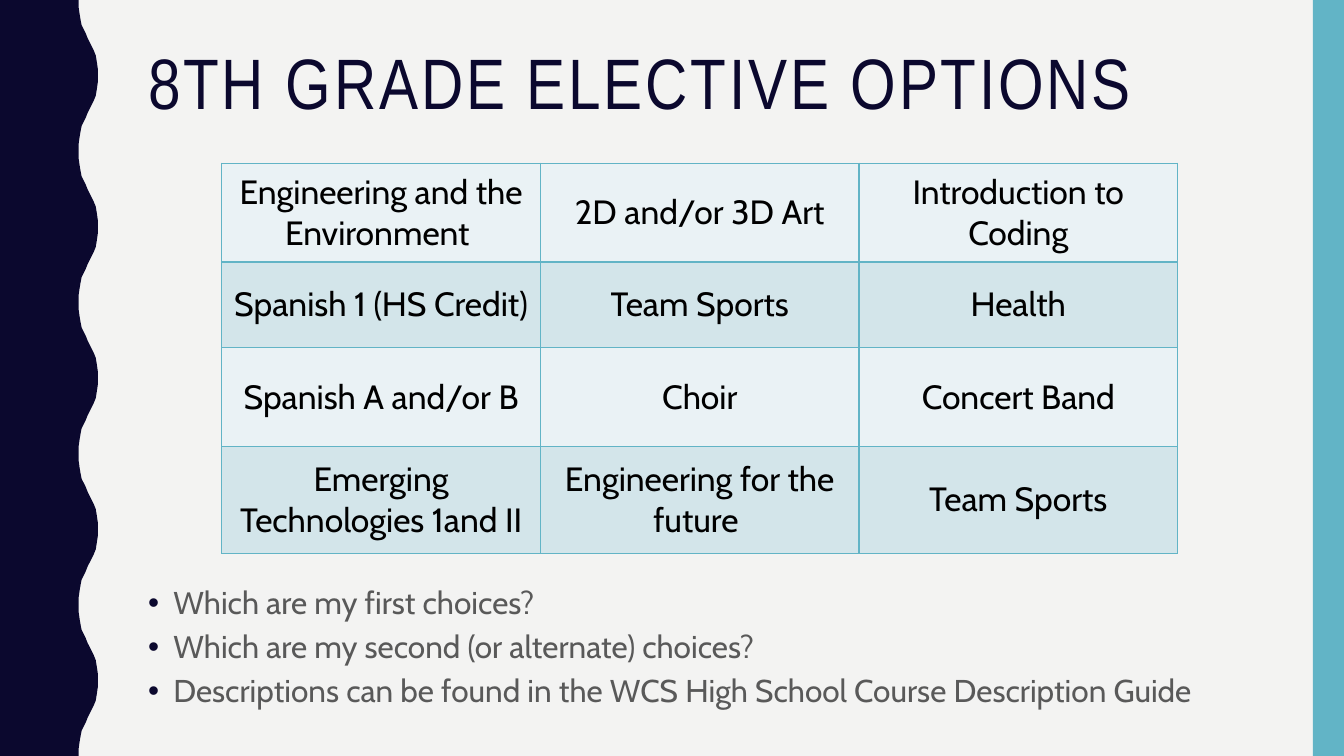
from lxml import etree
from pptx import Presentation
from pptx import util as u
from pptx.dml import color
from pptx.enum import text
from pptx.enum import shapes
from pptx.oxml import ns

PX = 9144
NAVY, TEAL, PAPER, GREY, BLACK = "0B082E", "62B4C6", "F3F3F2", "595959", "000000"
BANDS = ["EAF2F5", "D3E5EA"]
WIDTH, HEIGHT = 1333, 750

WAVE_PERIOD = 150
WAVE_RISE = [(78, 0), (78, 7), (79, 14), (80, 20), (81, 25), (83, 29), (85, 33),
             (87, 38), (89, 42), (91, 46), (93, 50), (95, 55), (96, 61), (97, 68)]

ELECTIVES = [
    ["Engineering and the Environment ", "2D and/or 3D Art", "Introduction to Coding"],
    ["Spanish 1 (HS Credit)", "Team Sports", "Health"],
    ["Spanish A and/or B", "Choir", "Concert Band"],
    ["Emerging Technologies 1and II", "Engineering for the future ", "Team Sports"],
]
QUESTIONS = [
    "Which are my first choices?",
    "Which are my second (or alternate) choices?",
    "Descriptions can be found in the WCS High School Course Description Guide",
]


def rgb(value):
    """Turn a hex string into a colour."""
    return color.RGBColor.from_string(value)


def px(*lengths):
    """Turn whole pixels into EMU."""
    return [u.Emu(length * PX) for length in lengths]


def add_xml(parent, tag, **attributes):
    """Append a DrawingML element to a parent."""
    return etree.SubElement(parent, ns.qn(tag), attributes)


class SlideBuilder:
    """Hold the style and the current slide."""

    heading_font = "Arial Narrow"
    body_font = "Cabin"

    def __init__(self, deck):
        """Add a title-only page with a plain background."""
        self.page = deck.slides.add_slide(deck.slide_layouts[5])
        self.page.background.fill.solid()
        self.page.background.fill.fore_color.rgb = rgb(PAPER)

    def paint(self, shape, fill):
        """Give a shape a flat fill without line or shadow."""
        shape.shadow.inherit = False
        shape.fill.solid()
        shape.fill.fore_color.rgb = rgb(fill)
        shape.line.fill.background()

    def span(self, para, words, size, ink, font):
        """Add one formatted run."""
        span = para.add_run()
        span.text = words
        span.font.size = u.Pt(size)
        span.font.name = font
        span.font.color.rgb = rgb(ink)
        return span

    def wave(self, fill):
        """Draw the left band with its wavy edge."""
        fall = [(x, WAVE_PERIOD - y) for x, y in reversed(WAVE_RISE[1:])]
        period = WAVE_RISE + [(97, WAVE_PERIOD // 2)] + fall
        edge = [(x, top + y) for top in range(0, HEIGHT, WAVE_PERIOD) for x, y in period]
        outline = self.page.shapes.build_freeform(0, 0, scale=PX)
        outline.add_line_segments(edge + [(78, HEIGHT), (0, HEIGHT)], close=True)
        self.paint(outline.convert_to_shape(), fill)

    def band(self, left, top, width, height, fill):
        """Draw a plain rectangle."""
        place = px(left, top, width, height)
        self.paint(self.page.shapes.add_shape(shapes.MSO_SHAPE.RECTANGLE, *place), fill)

    def title(self, words, left, top, width, height):
        """Place and format the title."""
        box = self.page.shapes.title
        box.left, box.top, box.width, box.height = px(left, top, width, height)
        frame = box.text_frame
        frame.auto_size = text.MSO_AUTO_SIZE.NONE
        frame.vertical_anchor = text.MSO_ANCHOR.TOP
        para = frame.paragraphs[0]
        para.alignment = text.PP_ALIGN.LEFT
        para.line_spacing = 0.9
        span = self.span(para, words, 51, NAVY, self.heading_font)
        span._r.get_or_add_rPr().set("spc", "200")

    def border(self, cell):
        """Draw thin lines on all sides of a cell."""
        properties = cell._tc.get_or_add_tcPr()
        for index, side in enumerate(("a:lnL", "a:lnR", "a:lnT", "a:lnB")):
            line = etree.Element(ns.qn(side), w=str(u.Pt(1)))
            add_xml(add_xml(line, "a:solidFill"), "a:srgbClr", val=TEAL)
            properties.insert(index, line)

    def table(self, rows, left, top, widths, heights):
        """Add a banded table of centred cells."""
        place = px(left, top, sum(widths), sum(heights))
        table = self.page.shapes.add_table(len(rows), len(widths), *place).table
        table.first_row = table.horz_banding = False
        for column, width in zip(table.columns, px(*widths)):
            column.width = width
        for row, height in zip(table.rows, px(*heights)):
            row.height = height
        for i, row in enumerate(rows):
            for j, words in enumerate(row):
                cell = table.cell(i, j)
                cell.fill.solid()
                cell.fill.fore_color.rgb = rgb(BANDS[i % 2])
                cell.vertical_anchor = text.MSO_ANCHOR.MIDDLE
                self.border(cell)
                para = cell.text_frame.paragraphs[0]
                para.alignment = text.PP_ALIGN.CENTER
                self.span(para, words, 24, BLACK, self.body_font)

    def bullets(self, lines, left, top, width, height):
        """Add a bulleted list."""
        box = self.page.shapes.add_textbox(*px(left, top, width, height))
        frame = box.text_frame
        frame.word_wrap = True
        for index, words in enumerate(lines):
            para = frame.add_paragraph() if index else frame.paragraphs[0]
            para.line_spacing = 0.9
            para.space_before = u.Pt(7)
            properties = para._p.get_or_add_pPr()
            properties.set("marL", str(25 * PX))
            properties.set("indent", str(-25 * PX))
            add_xml(add_xml(properties, "a:buClr"), "a:srgbClr", val=NAVY)
            add_xml(properties, "a:buFont", typeface="Arial")
            add_xml(properties, "a:buChar", char="•")
            self.span(para, words, 22.5, GREY, self.body_font)


def main():
    """Build the slide and save it."""
    deck = Presentation()
    deck.slide_width, deck.slide_height = px(WIDTH, HEIGHT)
    slide = SlideBuilder(deck)
    slide.wave(NAVY)
    slide.band(1302, 0, 31, HEIGHT, TEAL)
    slide.title("8TH GRADE ELECTIVE OPTIONS", 137, 42, 1113, 107)
    slide.table(ELECTIVES, 220, 162, [316] * 3, [98, 85, 98, 106])
    slide.bullets(QUESTIONS, 137, 578, 1081, 153)
    deck.save("out.pptx")


if __name__ == "__main__":
    main()
